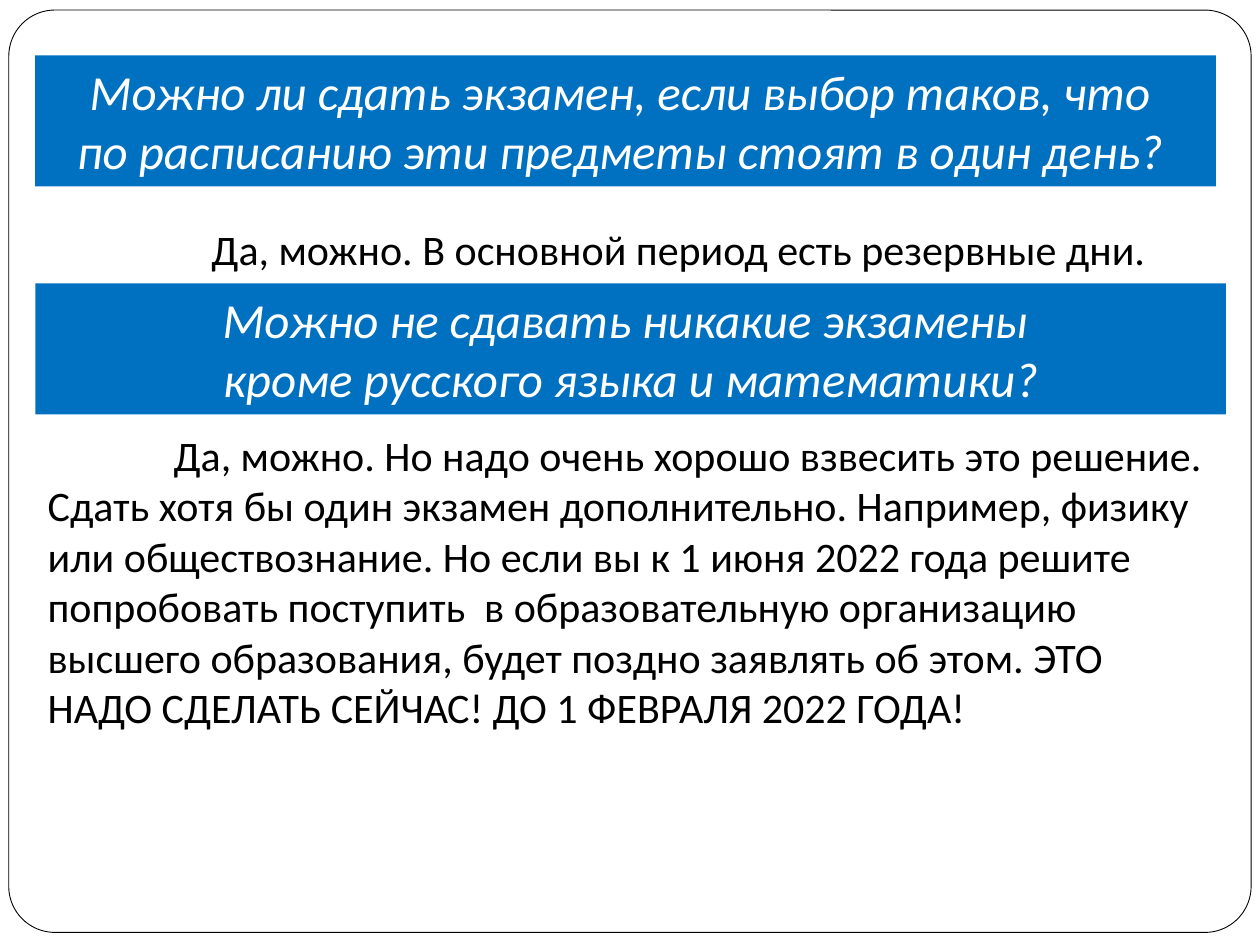
from pptx import Presentation
from pptx.dml.color import RGBColor
from pptx.enum.shapes import MSO_SHAPE as Shape
from pptx.enum.text import MSO_ANCHOR as Anchor, PP_ALIGN as Align
from pptx.util import Inches, Pt

BLACK = RGBColor(0x00, 0x00, 0x00)
WHITE = RGBColor(0xFF, 0xFF, 0xFF)
BLUE = RGBColor(0x00, 0x70, 0xC0)

LEFT = 0.28
QUESTION_FONT = {"name": "Calibri", "size": Pt(28), "italic": True}
ANSWER_FONT = {"name": "Calibri", "size": Pt(24)}

FIRST_QUESTION = [
    "Можно ли сдать экзамен, если выбор таков, что ",
    "по расписанию эти предметы стоят в один день? ",
]
FIRST_ANSWER = "Да, можно. В основной период есть резервные дни."
SECOND_QUESTION = [
    "Можно не сдавать никакие экзамены ",
    "кроме русского языка и математики?",
]
SECOND_ANSWER = (
    "Да, можно. Но надо очень хорошо взвесить это решение. "
    "Сдать хотя бы один экзамен дополнительно. Например, физику "
    "или обществознание. Но если вы к 1 июня 2022 года решите "
    "попробовать поступить  в образовательную организацию "
    "высшего образования, будет поздно заявлять об этом. ЭТО "
    "НАДО СДЕЛАТЬ СЕЙЧАС! ДО 1 ФЕВРАЛЯ 2022 ГОДА!"
)


def add_paragraph(paragraph, text, font_values, color):
    """Write one formatted run into a paragraph."""
    run = paragraph.add_run()
    run.text = text
    for name, value in font_values.items():
        setattr(run.font, name, value)
    run.font.color.rgb = color


def add_frame(slide):
    """Draw the rounded border around the slide."""
    shape = slide.shapes.add_shape(
        Shape.ROUNDED_RECTANGLE, Inches(0.07), Inches(0.08), Inches(9.86), Inches(7.32)
    )
    shape.adjustments[0] = 0.05
    shape.shadow.inherit = False
    shape.fill.solid()
    shape.fill.fore_color.rgb = WHITE
    shape.line.color.rgb = BLACK
    shape.line.width = Pt(0.5)


def add_question(slide, top, width, lines):
    """Add a blue banner with centred italic lines."""
    shape = slide.shapes.add_shape(
        Shape.RECTANGLE, Inches(LEFT), Inches(top), Inches(width), Inches(1.04)
    )
    shape.shadow.inherit = False
    shape.fill.solid()
    shape.fill.fore_color.rgb = BLUE
    shape.line.fill.background()
    frame = shape.text_frame
    frame.word_wrap = True
    frame.vertical_anchor = Anchor.TOP
    for index, line in enumerate(lines):
        paragraph = frame.add_paragraph() if index else frame.paragraphs[0]
        paragraph.alignment = Align.CENTER
        add_paragraph(paragraph, line, QUESTION_FONT, WHITE)


def add_answer(slide, top, width, height, text, indent, margin_top=0.05):
    """Add a plain answer with an indented first line."""
    box = slide.shapes.add_textbox(
        Inches(LEFT), Inches(top), Inches(width), Inches(height)
    )
    frame = box.text_frame
    frame.word_wrap = True
    frame.margin_top = Inches(margin_top)
    paragraph = frame.paragraphs[0]
    properties = paragraph._p.get_or_add_pPr()
    properties.set("indent", str(Inches(indent)))
    add_paragraph(paragraph, text, ANSWER_FONT, BLACK)


def main():
    """Build the slide of exam questions and answers."""
    presentation = Presentation()
    presentation.slide_width = Inches(10)
    presentation.slide_height = Inches(7.5)
    slide = presentation.slides.add_slide(presentation.slide_layouts[6])
    add_frame(slide)
    add_question(slide, 0.44, 9.37, FIRST_QUESTION)
    add_answer(slide, 1.55, 9.45, 0.79, FIRST_ANSWER, 1.3, margin_top=0.22)
    add_question(slide, 2.25, 9.45, SECOND_QUESTION)
    add_answer(slide, 3.36, 9.37, 2.93, SECOND_ANSWER, 1)
    presentation.save("out.pptx")


if __name__ == "__main__":
    main()
